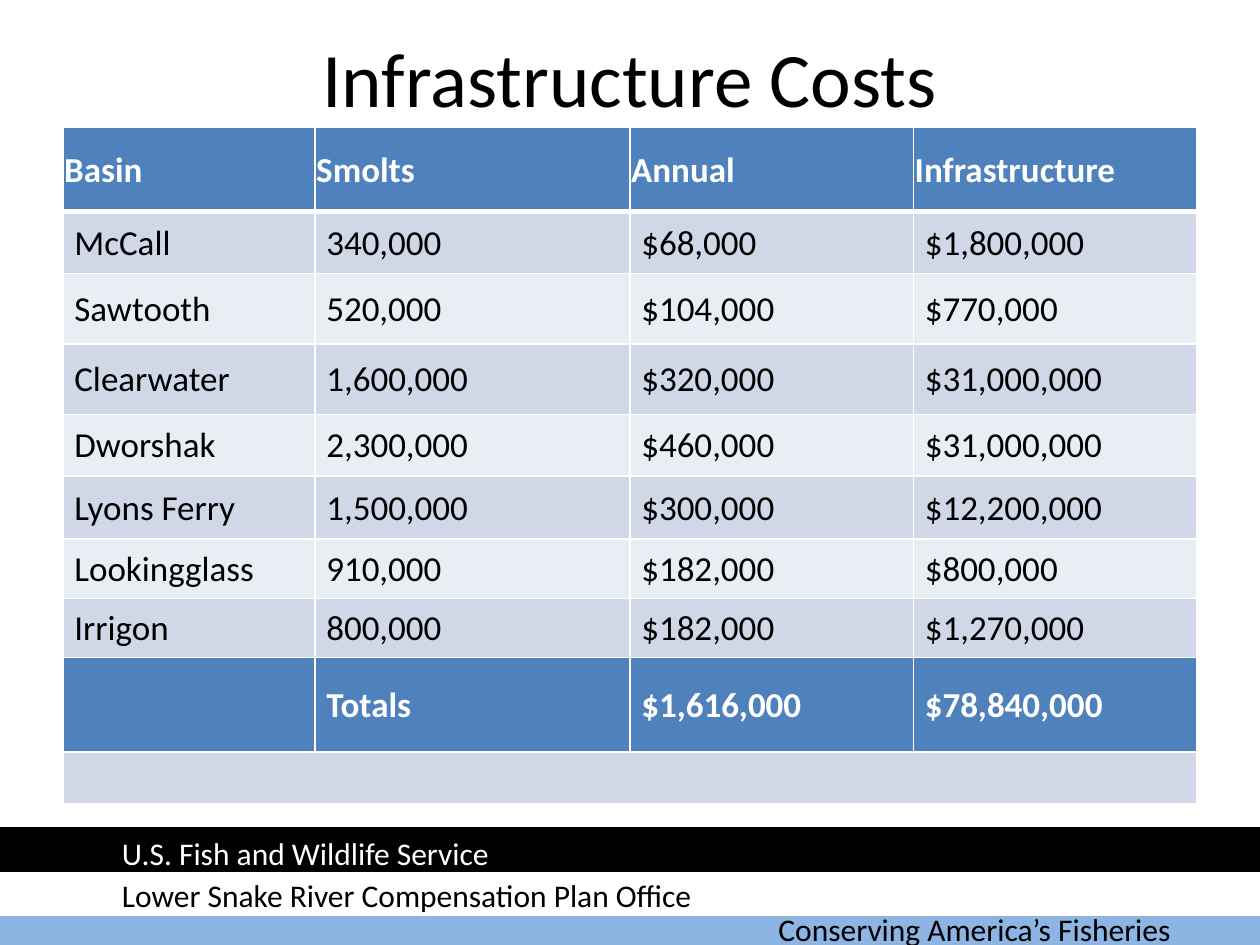
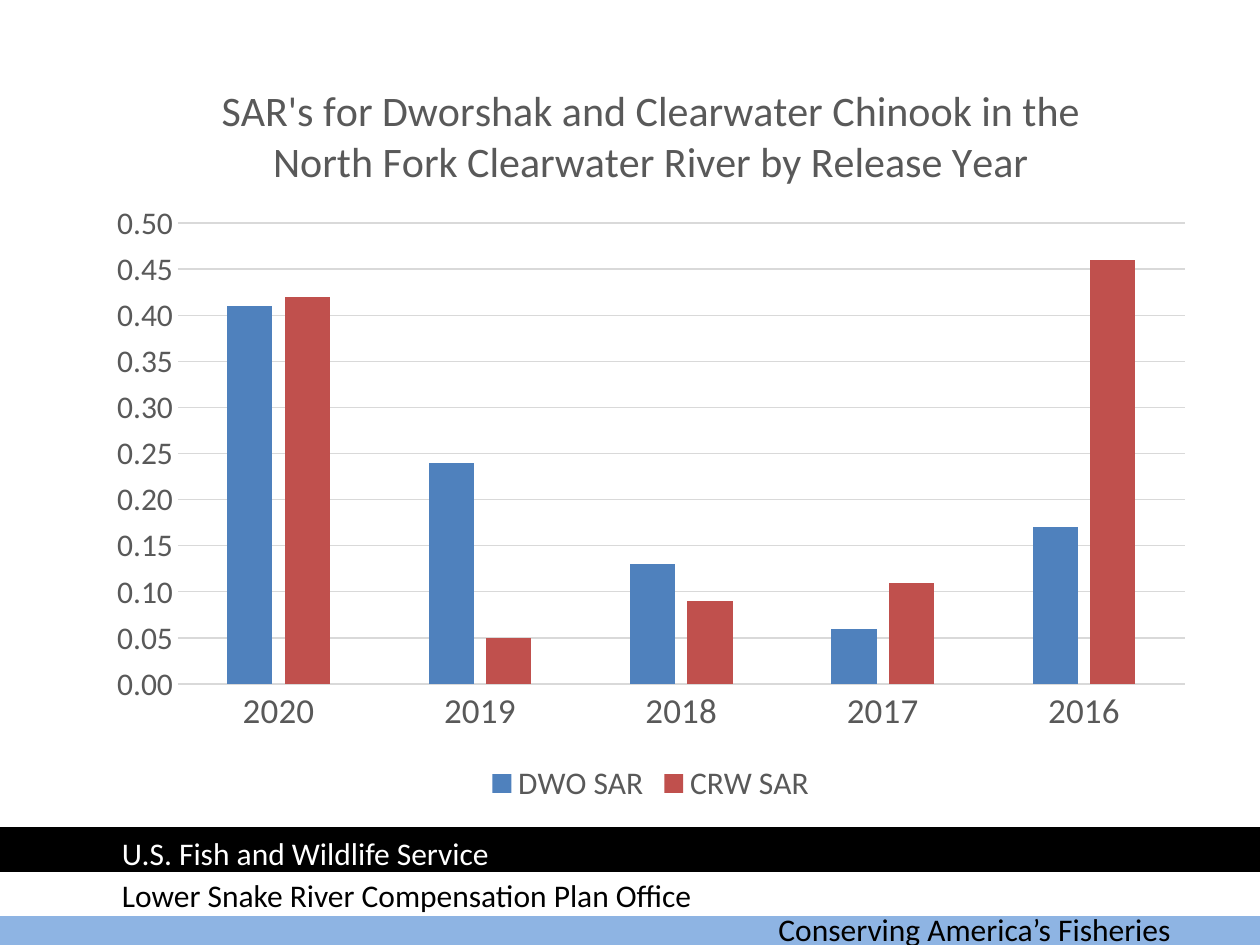
import dataclasses

import lxml.etree
import pptx
import pptx.chart.data
import pptx.dml.color
import pptx.enum.chart
import pptx.enum.shapes
import pptx.enum.text
import pptx.oxml
import pptx.oxml.ns
import pptx.util

Inches = pptx.util.Inches
Pt = pptx.util.Pt
qn = pptx.oxml.ns.qn


@dataclasses.dataclass(frozen=True)
class Theme:
    """Colours, typeface and type sizes shared by the slides."""
    font: str = "Calibri"
    black: str = "000000"
    white: str = "FFFFFF"
    sky: str = "8EB4E3"
    blue: str = "4F81BD"
    red: str = "C0504D"
    stripe_dark: str = "D0D8E8"
    stripe_light: str = "E9EDF4"
    gray: str = "595959"
    grid: str = "D9D9D9"
    title: int = 44
    chart_title: int = 24
    table: int = 20
    label: int = 18


THEME = Theme()

COST_ROWS = [
    ("Basin", "Smolts", "Annual", "Infrastructure"),
    ("McCall", "340,000", "$68,000", "$1,800,000"),
    ("Sawtooth", "520,000", "$104,000", "$770,000"),
    ("Clearwater", "1,600,000", "$320,000", "$31,000,000"),
    ("Dworshak", "2,300,000", "$460,000", "$31,000,000"),
    ("Lyons Ferry", "1,500,000", "$300,000", "$12,200,000"),
    ("Lookingglass", "910,000", "$182,000", "$800,000"),
    ("Irrigon", "800,000", "$182,000", "$1,270,000"),
    ("", "Totals", "$1,616,000", "$78,840,000"),
    ("", "", "", ""),
]
COLUMN_WIDTHS = [2, 2.5, 2.25, 2.25]
ROW_HEIGHTS = [0.67, 0.49, 0.56, 0.56, 0.49, 0.5, 0.47, 0.47, 0.75, 0.41]
HEADER_ROW, TOTALS_ROW, CLOSING_ROW = 0, 8, 9

RELEASE_YEARS = ["2020", "2019", "2018", "2017", "2016"]
RETURN_RATES = [
    ("DWO SAR", (0.41, 0.24, 0.13, 0.06, 0.17), THEME.blue),
    ("CRW SAR", (0.42, 0.05, 0.09, 0.11, 0.46), THEME.red),
]


def rgb(color):
    """Turn a hex string into a colour."""
    return pptx.dml.color.RGBColor.from_string(color)


def style_font(font, size, color, bold=False):
    """Apply the theme typeface with a size, colour and weight."""
    font.name = THEME.font
    font.size = Pt(size)
    font.bold = bold
    font.color.rgb = rgb(color)


def style_line(line, color, width):
    """Give a line a solid colour and a width in points."""
    line.color.rgb = rgb(color)
    line.width = Pt(width)


def add_band(slide, left, top, width, height, color):
    """Draw one full-width footer band."""
    sp = slide.shapes.add_shape(
        pptx.enum.shapes.MSO_SHAPE.RECTANGLE,
        Inches(left), Inches(top), Inches(width), Inches(height))
    sp.shadow.inherit = False
    sp.fill.solid()
    sp.fill.fore_color.rgb = rgb(color)
    style_line(sp.line, color, 2)


def add_label(slide, left, top, width, text, color):
    """Place one line of footer text."""
    sp = slide.shapes.add_textbox(
        Inches(left), Inches(top), Inches(width), Inches(0.4))
    tf = sp.text_frame
    tf.word_wrap = True
    tf.text = text
    style_font(tf.paragraphs[0].runs[0].font, THEME.label, color)


def add_footer(slide, left=0, top=6.58, width=10):
    """Draw the three bands and their wording."""
    for dx, dy, color in [(-0.01, 0.59, THEME.sky), (0, 0.35, THEME.white),
                          (0, 0, THEME.black)]:
        add_band(slide, left + dx, top + dy, width, 0.33, color)
    for dx, dy, box_width, text, color in [
        (6.08, 0.59, 3.67, "Conserving America’s Fisheries", THEME.black),
        (0.87, -0.01, 4.16, "U.S. Fish and Wildlife Service", THEME.white),
        (0.87, 0.32, 4.97, "Lower Snake River Compensation Plan Office",
         THEME.black),
    ]:
        add_label(slide, left + dx, top + dy, box_width, text, color)


def add_title(slide, text, left, top, width, height):
    """Move and format the title placeholder."""
    sp = slide.shapes.title
    sp.left, sp.top = Inches(left), Inches(top)
    sp.width, sp.height = Inches(width), Inches(height)
    tf = sp.text_frame
    tf.text = text
    tf.vertical_anchor = pptx.enum.text.MSO_ANCHOR.MIDDLE
    p = tf.paragraphs[0]
    p.alignment = pptx.enum.text.PP_ALIGN.CENTER
    style_font(p.runs[0].font, THEME.title, THEME.black)


def set_borders(cell, top, bottom):
    """Rule a cell in white, with top and bottom widths in points."""
    tc_pr = cell._tc.get_or_add_tcPr()
    edges = [("a:lnL", 1), ("a:lnR", 1), ("a:lnT", top), ("a:lnB", bottom)]
    for i, (tag, width) in enumerate(edges):
        ln = lxml.etree.Element(qn(tag), w=str(Pt(width)))
        fill = lxml.etree.SubElement(ln, qn("a:solidFill"))
        lxml.etree.SubElement(fill, qn("a:srgbClr"), val=THEME.white)
        tc_pr.insert(i, ln)


def format_cell(cell, row, text):
    """Fill, rule and write one cost cell according to its row."""
    strong = row in (HEADER_ROW, TOTALS_ROW)
    stripe = THEME.stripe_dark if row % 2 else THEME.stripe_light
    cell.fill.solid()
    cell.fill.fore_color.rgb = rgb(THEME.blue if strong else stripe)
    set_borders(cell, 3 if row == HEADER_ROW + 1 else 1,
                3 if row == HEADER_ROW else 1)
    if not text:
        return
    cell.margin_left = Inches(0.01 if row == HEADER_ROW else 0.09)
    cell.margin_top = cell.margin_right = Inches(0.01)
    cell.margin_bottom = 0
    cell.vertical_anchor = pptx.enum.text.MSO_ANCHOR.MIDDLE
    cell.text_frame.text = text
    style_font(cell.text_frame.paragraphs[0].runs[0].font, THEME.table,
               THEME.white if strong else THEME.black, strong)


def add_cost_table(slide, left, top):
    """Build the table of costs by basin."""
    table = slide.shapes.add_table(
        len(COST_ROWS), len(COLUMN_WIDTHS), Inches(left), Inches(top),
        Inches(sum(COLUMN_WIDTHS)), Inches(sum(ROW_HEIGHTS))).table
    for column, width in zip(table.columns, COLUMN_WIDTHS):
        column.width = Inches(width)
    for i, (height, texts) in enumerate(zip(ROW_HEIGHTS, COST_ROWS)):
        table.rows[i].height = Inches(height)
        for j, text in enumerate(texts):
            format_cell(table.cell(i, j), i, text)
    table.cell(CLOSING_ROW, 0).merge(
        table.cell(CLOSING_ROW, len(COLUMN_WIDTHS) - 1))


def place_plot(chart, **box):
    """Fix the inner plot area as fractions of the chart."""
    area = chart._chartSpace.chart.plotArea
    for old in area.findall(qn("c:layout")):
        area.remove(old)
    layout = lxml.etree.Element(qn("c:layout"))
    manual = lxml.etree.SubElement(layout, qn("c:manualLayout"))
    settings = {"layoutTarget": "inner", "xMode": "edge", "yMode": "edge"}
    for name, value in {**settings, **box}.items():
        lxml.etree.SubElement(manual, qn("c:" + name), val=str(value))
    area.insert(0, layout)


def format_axes(chart):
    """Style the year axis, the rate axis and the gridlines."""
    years, rates = chart.category_axis, chart.value_axis
    for axis, size in [(years, THEME.table), (rates, THEME.label)]:
        axis.major_tick_mark = pptx.enum.chart.XL_TICK_MARK.NONE
        axis.minor_tick_mark = pptx.enum.chart.XL_TICK_MARK.NONE
        style_font(axis.tick_labels.font, size, THEME.gray)
    style_line(years.format.line, THEME.grid, 0.75)
    rates.format.line.fill.background()
    rates.minimum_scale, rates.maximum_scale = 0, 0.5
    rates.major_unit = 0.05
    rates.tick_labels.number_format = "0.00"
    rates.tick_labels.number_format_is_linked = False
    style_line(rates.major_gridlines.format.line, THEME.grid, 0.75)


def add_return_chart(slide, left, top, width, height):
    """Build the column chart of return rates by release year."""
    data = pptx.chart.data.CategoryChartData(number_format="0.00")
    data.categories = RELEASE_YEARS
    for name, values, _ in RETURN_RATES:
        data.add_series(name, values)
    chart = slide.shapes.add_chart(
        pptx.enum.chart.XL_CHART_TYPE.COLUMN_CLUSTERED, Inches(left),
        Inches(top), Inches(width), Inches(height), data).chart
    style_font(chart.font, 10, THEME.black)
    tf = chart.chart_title.text_frame
    tf.text = ("SAR's for Dworshak and Clearwater Chinook in the "
               "North Fork Clearwater River by Release Year")
    style_font(tf.paragraphs[0].runs[0].font, THEME.chart_title, THEME.gray)
    chart.chart_title.include_in_layout = False
    chart.has_legend = True
    chart.legend.position = pptx.enum.chart.XL_LEGEND_POSITION.BOTTOM
    chart.legend.include_in_layout = False
    style_font(chart.legend.font, THEME.label, THEME.gray)
    plot = chart.plots[0]
    plot.gap_width, plot.overlap = 219, -27
    plot.vary_by_categories = False
    for series, (_, _, color) in zip(plot.series, RETURN_RATES):
        series.format.fill.solid()
        series.format.fill.fore_color.rgb = rgb(color)
    format_axes(chart)
    place_plot(chart, x=0.075, y=0.225, w=0.905, h=0.61)


def build_cost_slide(prs):
    """Add the infrastructure cost slide."""
    s = prs.slides.add_slide(prs.slide_layouts.get_by_name("Title Only"))
    add_footer(s)
    add_title(s, "Infrastructure Costs", 0.5, 0.17, 9, 0.87)
    add_cost_table(s, 0.5, 1.01)


def build_return_slide(prs):
    """Add the return rate slide."""
    s = prs.slides.add_slide(prs.slide_layouts.get_by_name("Blank"))
    add_footer(s)
    add_return_chart(s, 0.75, 0.42, 8.83, 6)


def main():
    """Build and save the presentation."""
    prs = pptx.Presentation()
    prs.slide_width, prs.slide_height = Inches(10), Inches(7.5)
    build_cost_slide(prs)
    build_return_slide(prs)
    prs.save("out.pptx")


if __name__ == "__main__":
    main()
